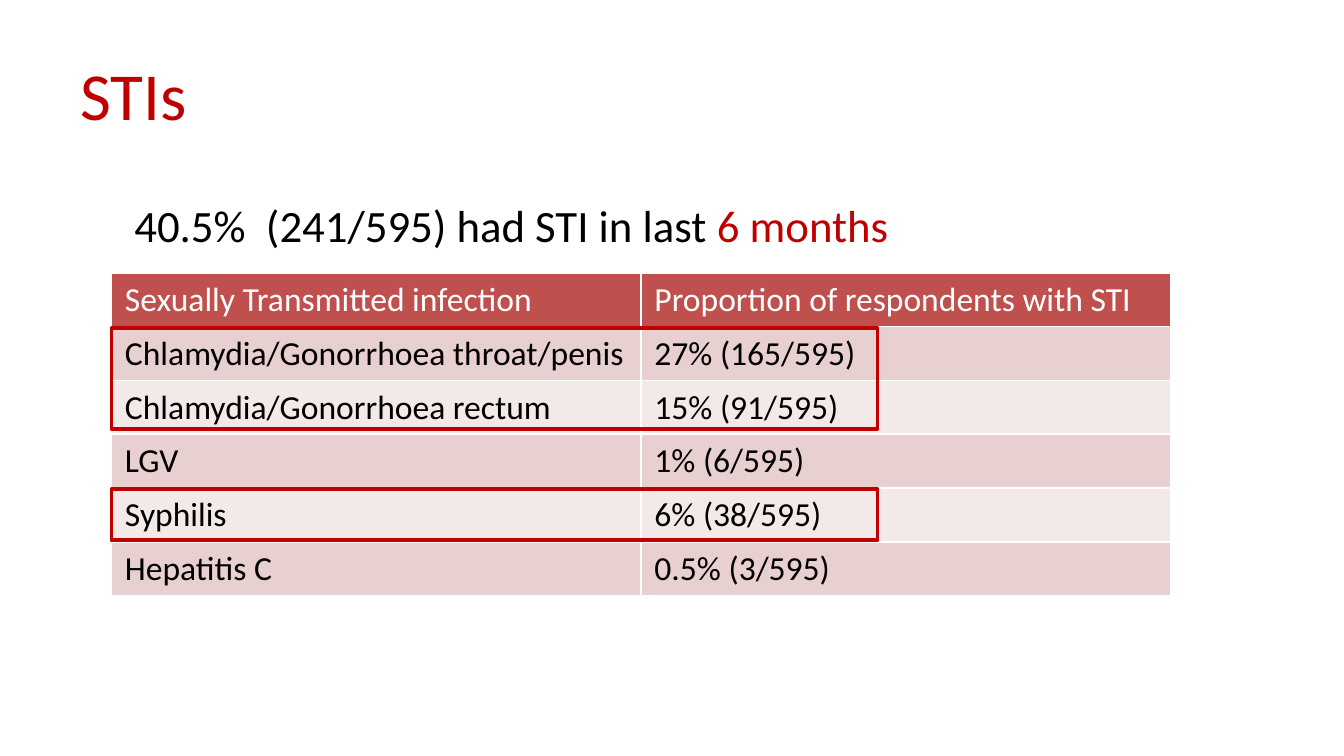
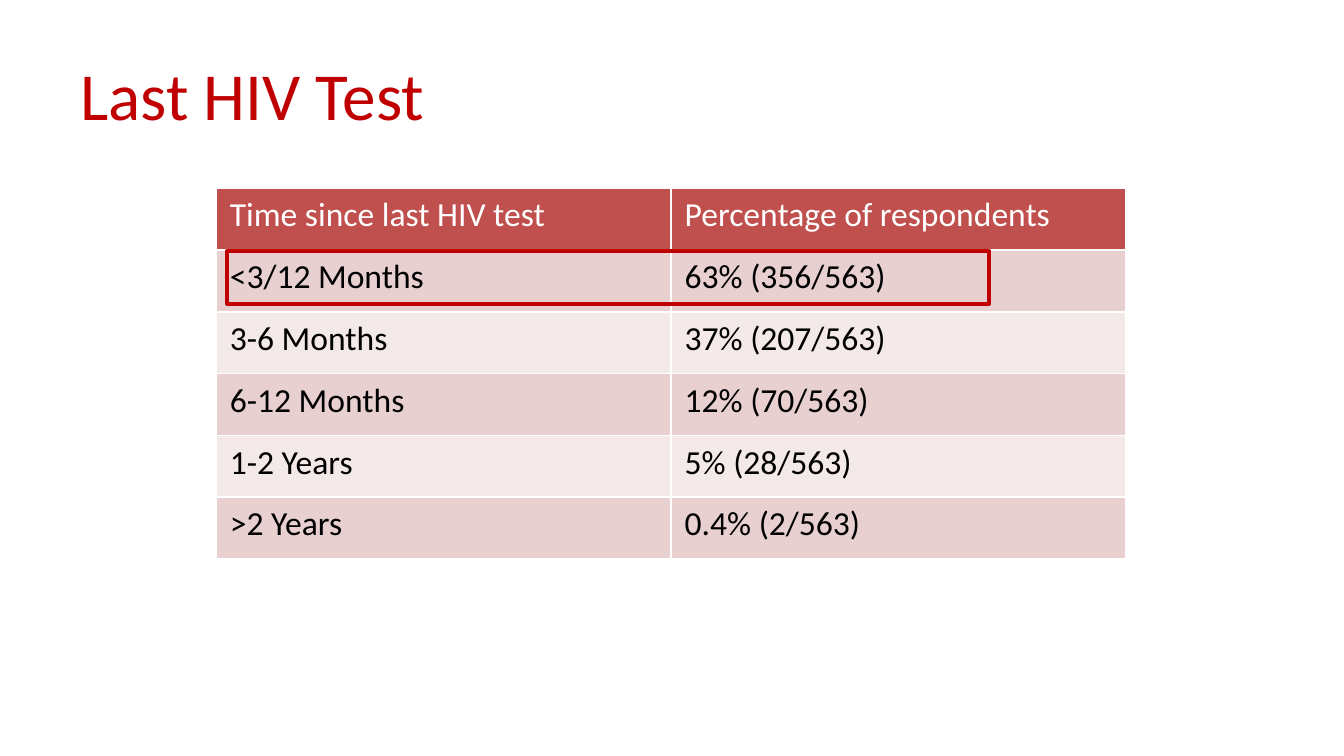
from lxml import etree
from pptx import Presentation
from pptx.dml.color import RGBColor
from pptx.enum.shapes import MSO_SHAPE
from pptx.enum.text import MSO_ANCHOR
from pptx.oxml.ns import qn
from pptx.util import Inches, Pt

RECT = MSO_SHAPE.RECTANGLE
MIDDLE = MSO_ANCHOR.MIDDLE
FONT = "Calibri"
COLORS = {
    "accent": "C00000",
    "header": "C0504D",
    "odd": "E8D0D0",
    "even": "F4E9E9",
    "white": "FFFFFF",
    "black": "000000",
}

SLIDES = [
    {
        "title": "STIs",
        "lead": [("40.5%  (241/595) had STI in last ", "black"), ("6 months", "accent")],
        "table": (0.83, 2.03, 7.88, 2.4),
        "row_height": 0.36,
        "rows": [
            ("Sexually Transmitted infection", "Proportion of respondents with STI"),
            ("Chlamydia/Gonorrhoea throat/penis", "27% (165/595)"),
            ("Chlamydia/Gonorrhoea rectum", "15% (91/595)"),
            ("LGV", "1% (6/595)"),
            ("Syphilis", "6% (38/595)"),
            ("Hepatitis C", "0.5% (3/595)"),
        ],
        "highlights": [(0.83, 2.44, 5.7, 0.75), (0.83, 3.64, 5.7, 0.38)],
    },
    {
        "title": "Last HIV Test",
        "lead": [],
        "table": (1.61, 1.4, 6.77, 2.76),
        "row_height": 0.46,
        "rows": [
            ("Time since last HIV test", "Percentage of respondents"),
            ("<3/12 Months", "63% (356/563)"),
            ("3-6 Months", "37% (207/563)"),
            ("6-12 Months", "12% (70/563)"),
            ("1-2 Years", "5% (28/563)"),
            (">2 Years", "0.4% (2/563)"),
        ],
        "highlights": [(1.69, 1.87, 5.67, 0.39)],
    },
]


def rgb(name):
    return RGBColor.from_string(COLORS[name])


def set_font(font, size, color=None):
    font.name = FONT
    font.size = Pt(size)
    font.bold = False
    if color:
        font.color.rgb = rgb(color)


def add_text(s, box, runs, size):
    tf = s.shapes.add_textbox(*map(Inches, box)).text_frame
    tf.word_wrap = True
    p = tf.paragraphs[0]
    set_font(p.font, size)
    for text, color in runs:
        r = p.add_run()
        r.text = text
        r.font.color.rgb = rgb(color)
    return tf


def add_borders(cell):
    tc_pr = cell._tc.get_or_add_tcPr()
    for side in "LRTB":
        ln = etree.SubElement(tc_pr, qn(f"a:ln{side}"), w=str(Pt(1)))
        fill = etree.SubElement(ln, qn("a:solidFill"))
        etree.SubElement(fill, qn("a:srgbClr"), val=COLORS["white"])


def add_table(s, box, row_height, rows):
    frame = s.shapes.add_table(len(rows), len(rows[0]), *map(Inches, box))
    table = frame.table
    for i, row in enumerate(rows):
        table.rows[i].height = Inches(row_height)
        fill = "header" if i == 0 else "odd" if i % 2 else "even"
        for j, text in enumerate(row):
            cell = table.cell(i, j)
            cell.text = text
            set_font(cell.text_frame.paragraphs[0].font, 18, "black" if i else "white")
            add_borders(cell)
            cell.fill.solid()
            cell.fill.fore_color.rgb = rgb(fill)
    frame.height = Inches(box[3])


def add_highlight(s, box):
    sp = s.shapes.add_shape(RECT, *map(Inches, box))
    sp.shadow.inherit = False
    sp.fill.background()
    sp.line.color.rgb = rgb("accent")
    sp.line.width = Pt(2)


def add_slide(prs, content):
    s = prs.slides.add_slide(prs.slide_layouts[6])
    title = add_text(s, (0.5, 0.23, 9, 0.94), [(content["title"], "accent")], 36)
    title.vertical_anchor = MIDDLE
    if content["lead"]:
        lead = add_text(s, (0.5, 1.31, 9, 3.71), content["lead"], 24)
        lead.margin_left = Inches(0.5)
        lead.margin_top = Inches(0.16)
    add_table(s, content["table"], content["row_height"], content["rows"])
    for box in content["highlights"]:
        add_highlight(s, box)


def main():
    prs = Presentation()
    prs.slide_width = Inches(10)
    prs.slide_height = prs.slide_width * 9 // 16
    for content in SLIDES:
        add_slide(prs, content)
    prs.save("out.pptx")


if __name__ == "__main__":
    main()
